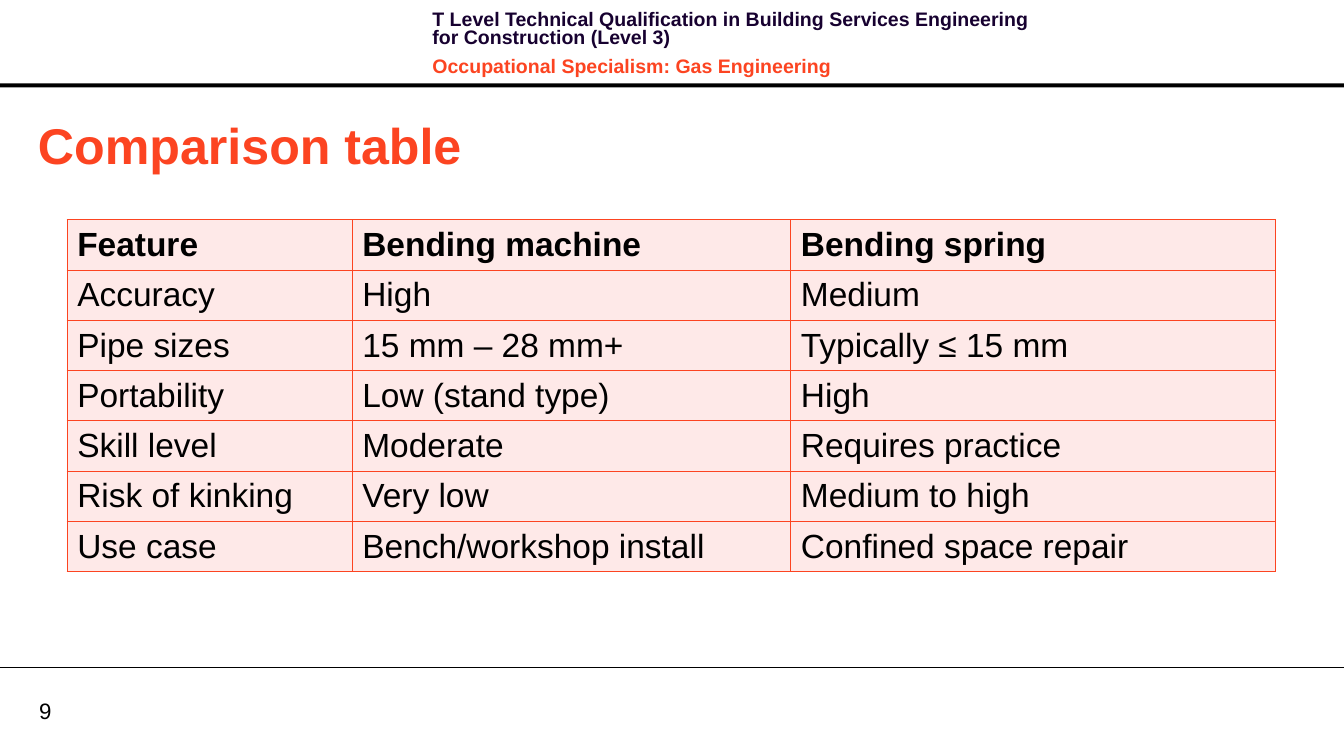
from dataclasses import dataclass

from lxml import etree
from pptx import Presentation
from pptx import util as u
from pptx.dml.color import RGBColor
from pptx.enum import shapes, text
from pptx.oxml.ns import qn

WIDE, HIGH = 13.39, 7.48


@dataclass(frozen=True)
class Theme:
    font: str = "Arial"
    ink: str = "000000"
    navy: str = "170130"
    red: str = "FC4421"
    blush: str = "FEE9E8"
    title: int = 36
    body: int = 24
    page: int = 16
    head: int = 14


class Page:
    def __init__(self, slide, theme):
        self.slide, self.theme = slide, theme

    def run(self, para, words, size, color, bold=False):
        run = para.add_run()
        run.text = words
        font = run.font
        font.name, font.size, font.bold = self.theme.font, u.Pt(size), bold
        font.color.rgb = RGBColor.from_string(color)

    def label(self, box, lines, size, bold=False, pad=(0.1, 0.05),
              anchor=text.MSO_ANCHOR.MIDDLE, pitch=None, gap=0):
        """Add a text box; lines holds (words, color), gap goes around each."""
        frame = self.slide.shapes.add_textbox(*map(u.Inches, box)).text_frame
        frame.word_wrap = True
        frame.vertical_anchor = anchor
        frame.margin_left = frame.margin_right = u.Inches(pad[0])
        frame.margin_top = frame.margin_bottom = u.Inches(pad[1])
        for i, (words, color) in enumerate(lines):
            para = frame.add_paragraph() if i else frame.paragraphs[0]
            if pitch:
                para.line_spacing = u.Pt(pitch)
            para.space_before = u.Pt(gap if i else 0)
            para.space_after = u.Pt(gap)
            self.run(para, words, size, color, bold)

    def bar(self, box, color):
        shape = self.slide.shapes.add_shape(
            shapes.MSO_SHAPE.RECTANGLE, *map(u.Inches, box))
        shape.shadow.inherit = False
        shape.fill.solid()
        shape.fill.fore_color.rgb = RGBColor.from_string(color)
        shape.line.fill.background()

    def rule(self, top, color, width):
        line = self.slide.shapes.add_connector(
            shapes.MSO_CONNECTOR.STRAIGHT,
            0, u.Inches(top), u.Inches(WIDE), u.Inches(top))
        line.line.color.rgb = RGBColor.from_string(color)
        line.line.width = u.Pt(width)
        etree.SubElement(line._element.spPr, qn("a:effectLst"))

    def edge(self, cell, color, width):
        """Draw the four borders of a cell, placed ahead of its fill."""
        props = cell._tc.get_or_add_tcPr()
        for i, side in enumerate(("lnL", "lnR", "lnT", "lnB")):
            line = etree.Element(qn(f"a:{side}"), w=str(u.Pt(width)))
            fill = etree.SubElement(line, qn("a:solidFill"))
            etree.SubElement(fill, qn("a:srgbClr"), val=color)
            props.insert(i, line)

    def table(self, left, top, cols, height, rows):
        theme = self.theme
        grid = self.slide.shapes.add_table(
            len(rows), len(cols), u.Inches(left), u.Inches(top),
            u.Inches(sum(cols)), u.Inches(height * len(rows))).table
        for col, width in zip(grid.columns, cols):
            col.width = u.Inches(width)
        for r, row in enumerate(rows):
            for c, words in enumerate(row):
                cell = grid.cell(r, c)
                cell.vertical_anchor = text.MSO_ANCHOR.MIDDLE
                cell.fill.solid()
                cell.fill.fore_color.rgb = RGBColor.from_string(theme.blush)
                self.edge(cell, theme.red, 1)
                para = cell.text_frame.paragraphs[0]
                self.run(para, words, theme.body, theme.ink, r == 0)


ROWS = [
    ("Feature", "Bending machine", "Bending spring"),
    ("Accuracy", "High", "Medium"),
    ("Pipe sizes", "15 mm – 28 mm+", "Typically ≤ 15 mm"),
    ("Portability", "Low (stand type)", "High"),
    ("Skill level", "Moderate", "Requires practice"),
    ("Risk of kinking", "Very low", "Medium to high"),
    ("Use case", "Bench/workshop install", "Confined space repair"),
]


def main():
    deck = Presentation()
    deck.slide_width, deck.slide_height = u.Inches(WIDE), u.Inches(HIGH)
    theme = Theme()
    page = Page(deck.slides.add_slide(deck.slide_layouts[6]), theme)

    page.bar((0, 0.83, WIDE, 0.04), theme.ink)
    page.label((0.39, 6.94, 0.64, 0.27), [("9", theme.ink)],
               theme.page, pad=(0, 0))
    page.rule(6.65, theme.ink, 0.75)
    page.label(
        (4.21, 0.07, 6.37, 0.64),
        [("T Level Technical Qualification in Building Services Engineering "
          "for Construction (Level 3)", theme.navy),
         ("Occupational Specialism: Gas Engineering", theme.red)],
        theme.head, bold=True, anchor=text.MSO_ANCHOR.TOP, pitch=13.1, gap=4)
    page.label((0.28, 1.08, 12.72, 0.71), [("Comparison table", theme.red)],
               theme.title, bold=True)
    page.table(0.67, 2.19, (2.84, 4.37, 4.83), 0.38, ROWS)
    deck.save("out.pptx")


if __name__ == "__main__":
    main()
